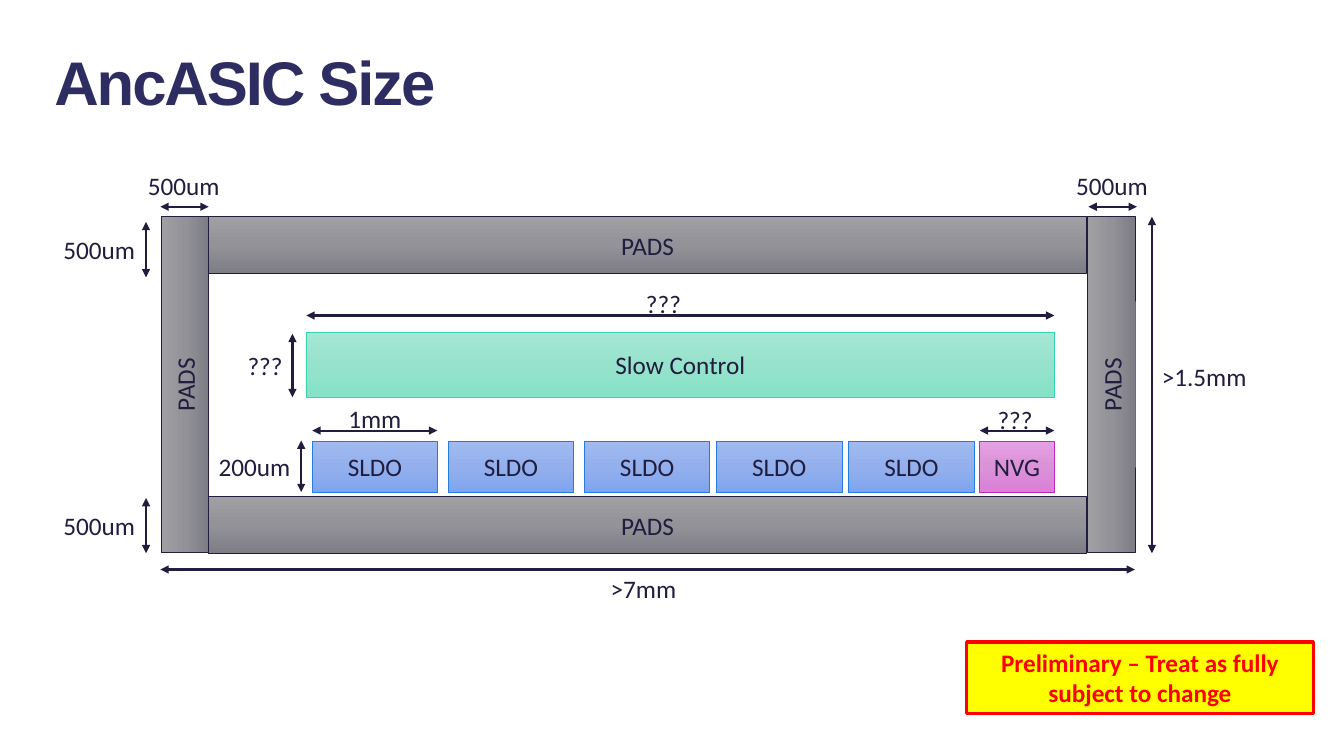
from dataclasses import dataclass

from lxml.etree import SubElement
from pptx import Presentation
from pptx.dml.color import RGBColor
from pptx.enum.shapes import MSO_CONNECTOR as Connector, MSO_SHAPE as Shape
from pptx.enum.text import MSO_ANCHOR as Anchor, MSO_AUTO_SIZE as AutoSize, PP_ALIGN as Align
from pptx.oxml.ns import qn
from pptx.util import Cm, Pt


@dataclass(frozen=True)
class Theme:
    # Gradient stops from top to bottom, then the outline
    pads: tuple = ("9F9FA4", "929298", "7E7D86", "201D3E")
    sldo: tuple = ("A1BBF0", "93B0ED", "7FA4EF", "247BE1")
    nvg: tuple = ("E59FE3", "DB93D8", "DA7ED7", "BF28BC")
    control: tuple = ("A5E7D4", "97E2CC", "83E2C7", "36D2AF")
    ink: str = "201D3E"
    title: str = "2E2D62"
    warning: str = "FF0000"
    warning_fill: str = "FFFF00"
    title_font: str = "Arial"
    body_font: str = "Calibri"
    title_size: int = 44
    body_size: int = 18


theme = Theme()


def write(shape, text, color=theme.ink, font=theme.body_font, size=theme.body_size,
          bold=False, align=Align.LEFT):
    paragraph = shape.text_frame.paragraphs[0]
    paragraph.text = text
    paragraph.alignment = align
    paragraph.font.name = font
    paragraph.font.size = Pt(size)
    paragraph.font.bold = bold
    paragraph.font.color.rgb = RGBColor.from_string(color)
    return paragraph


def add_box(left, top, width, height, line_color, line_width):
    shape = slide.shapes.add_shape(Shape.RECTANGLE, Cm(left), Cm(top), Cm(width), Cm(height))
    shape.shadow.inherit = False
    shape.line.color.rgb = RGBColor.from_string(line_color)
    shape.line.width = Pt(line_width)
    shape.text_frame.word_wrap = True
    return shape


presentation = Presentation()
presentation.slide_width, presentation.slide_height = Cm(33.87), Cm(19.05)
slide = presentation.slides.add_slide(presentation.slide_layouts[6])

# Title
title = slide.shapes.add_textbox(Cm(1.12), Cm(0.97), Cm(32.46), Cm(2.13))
title.text_frame.word_wrap = True
paragraph = write(title, "AncASIC Size", theme.title, theme.title_font, theme.title_size, True)
paragraph.runs[0].font._element.set("spc", "-150")

# Chip blocks: text, left, top, width, height, rotation, colours
pad_length, pad_depth, pad_middle = 8.46, 1.19, 9.69
blocks = [("PADS", 5.26, top, 22.12, 1.44, 0, theme.pads) for top in (5.46, 12.51)]
blocks += [("PADS", center - pad_length / 2, pad_middle - pad_depth / 2,
            pad_length, pad_depth, 270, theme.pads) for center in (4.66, 28.01)]
blocks += [("SLDO", left, 11.11, 3.16, 1.3, 0, theme.sldo)
           for left in (7.87, 11.3, 14.73, 18.06, 21.39)]
blocks += [("NVG", 24.69, 11.11, 1.88, 1.3, 0, theme.nvg),
           ("Slow Control", 7.72, 8.38, 18.85, 1.63, 0, theme.control)]

for text, left, top, width, height, rotation, (*stops, outline) in blocks:
    block = add_box(left, top, width, height, outline, 0.5)
    block.rotation = rotation
    block.fill.gradient()
    block.fill.gradient_angle = 270
    stop_list = block._element.spPr.find(qn("a:gradFill")).find(qn("a:gsLst"))
    stop_list.clear()
    for position, color in zip((0, 50000, 100000), stops):
        stop = SubElement(stop_list, qn("a:gs"), pos=str(position))
        SubElement(stop, qn("a:srgbClr"), val=color)
    block.text_frame.vertical_anchor = Anchor.MIDDLE
    write(block, text, align=Align.CENTER)

# Dimensions: label, its left, top and width, then the arrow's two ends
dimensions = [
    ("1mm", 8.53, 10.03, 1.85, (7.87, 10.85), (11.02, 10.85)),
    ("200um", 5.26, 11.25, 2.34, (7.59, 12.4), (7.59, 11.1)),
    ("???", 24.89, 10.06, 1.4, (24.69, 10.85), (26.57, 10.85)),
    ("???", 16.03, 7.14, 1.85, (7.72, 7.95), (26.57, 7.95)),
    ("???", 5.99, 8.71, 1.4, (7.37, 10.01), (7.37, 8.41)),
    ("500um", 1.35, 12.73, 2.34, (3.68, 12.55), (3.68, 13.94)),
    ("500um", 1.35, 5.77, 2.34, (3.68, 5.59), (3.68, 6.99)),
    ("500um", 3.48, 4.17, 2.34, (5.26, 5.21), (4.04, 5.21)),
    ("500um", 26.87, 4.17, 2.34, (28.65, 5.21), (27.43, 5.21)),
    (">7mm", 15.14, 14.33, 2.18, (28.6, 14.35), (4.04, 14.35)),
    (">1.5mm", 29.03, 8.99, 2.67, (29.03, 13.94), (29.03, 5.46)),
]
for text, left, top, width, start, end in dimensions:
    arrow = slide.shapes.add_connector(Connector.STRAIGHT, *map(Cm, start + end))
    arrow.line.color.rgb = RGBColor.from_string(theme.ink)
    arrow.line.width = Pt(1.5)
    for tag in ("a:headEnd", "a:tailEnd"):
        SubElement(arrow.line._get_or_add_ln(), qn(tag), type="triangle")
    SubElement(arrow._element.spPr, qn("a:effectLst"))

    label = slide.shapes.add_textbox(Cm(left), Cm(top), Cm(width), Cm(1.02))
    label.text_frame.word_wrap = False
    label.text_frame.auto_size = AutoSize.SHAPE_TO_FIT_TEXT
    write(label, text)

# Warning
warning = add_box(24.36, 16.18, 8.74, 1.8, theme.warning, 2.25)
warning.fill.solid()
warning.fill.fore_color.rgb = RGBColor.from_string(theme.warning_fill)
warning.text_frame.vertical_anchor = Anchor.TOP
write(warning, "Preliminary – Treat as fully subject to change", theme.warning,
      bold=True, align=Align.CENTER)

presentation.save("out.pptx")
